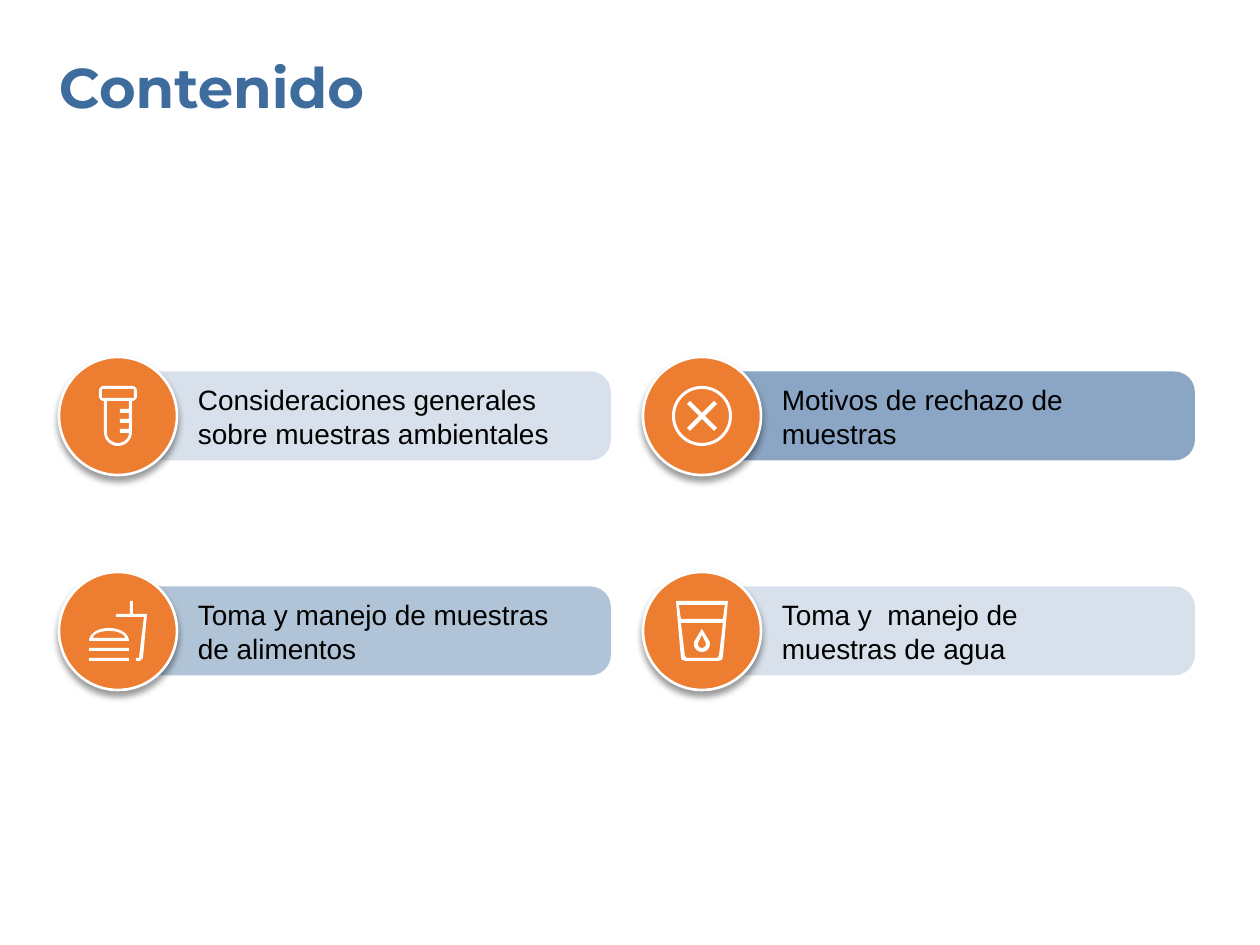
"""Build the contents slide: four labelled bars with round icons."""
from math import cos, radians, sin

from lxml import etree
from pptx import Presentation
from pptx import util as u
from pptx.dml.color import RGBColor
from pptx.enum import shapes, text
from pptx.oxml.ns import qn

THEME = {
    "blue": "3D6C9D", "orange": "ED7D31", "white": "FFFFFF", "black": "000000",
    "head": ("Montserrat", 32), "body": ("Arial", 16),
    "rim": 1.5, "round": 0.231,
    "shadow": {"blur": 4, "dist": 3, "alpha": 40},
}
TITLE = "Contenido"
ITEMS = [
    ("Consideraciones generales sobre muestras ambientales", 20, 379, "tube"),
    ("Motivos de rechazo de muestras", 60, 391, "cross"),
    ("Toma y manejo de muestras de alimentos", 40, 379, "meal"),
    ("Toma y  manejo de muestras de agua", 20, 358, "glass"),
]
COLS, STEP_X, STEP_Y = 2, 584, 215
MID = (118, 416)
DISC, BAR, LABEL = 118, (493, 89), (80, -33, 68)
HEAD = (59, 53, 1077, 68)
SCALE = 914400 / 126


def px(n):
    return u.Emu(round(n * SCALE))


def arc(x, y, rx, ry, start, end, parts=24):
    turns = [radians(start + (end - start) * i / parts) for i in range(parts + 1)]
    return [(x + rx * cos(t), y + ry * sin(t)) for t in turns]


def ring(r):
    return arc(0, 0, r, r, 0, 360, 72)


def drop(tip, r):
    return [(0, tip)] + arc(0, 13, r, r, -20, 200)


def box(left, top, right, bottom):
    return [(left, top), (right, top), (right, bottom), (left, bottom)]


def notch(y):
    return [(11, y), (2, y), (2, y + 4), (11, y + 4)]


ICONS = {
    "tube": [
        arc(-14, -25, 5, 5, 180, 270) + arc(14, -25, 5, 5, 270, 360)
        + arc(14, -20, 5, 5, 0, 90) + arc(0, 16, 14, 14, 0, 180)
        + [(-14, -15)] + arc(-14, -20, 5, 5, 90, 180),
        box(-16, -27, 16, -18),
        [(-11, -15), (11, -15)] + notch(-7) + notch(3) + notch(13)
        + arc(0, 17, 11, 10, 0, 180),
    ],
    "cross": [
        ring(30), ring(27),
        [(-12, 15), (0, 3), (12, 15), (15, 12), (3, 0), (15, -12),
         (12, -15), (0, -3), (-12, -15), (-15, -12), (-3, 0), (-15, 12)],
    ],
    "meal": [
        arc(-9, 10, 20, 13, 180, 360), arc(-9, 7, 16, 7, 180, 360),
        box(-29, 17, 11, 20), box(-29, 27, 11, 30),
        [(18, 30), (18, 27), (21, 27), (26, -14), (-2, -14), (-2, -17), (12, -17),
         (12, -30), (15, -30), (15, -17), (29, -17), (25, 27), (22, 30)],
    ],
    "glass": [
        [(-26, -30), (26, -30), (21, 26), (20, 29), (16, 30),
         (-16, 30), (-20, 29), (-21, 26)],
        [(-23, -26), (23, -26), (21, -12), (-21, -12)],
        [(-21, -8), (21, -8), (17, 25), (15, 27), (-15, 27), (-17, 25)],
        drop(-2, 8), drop(4, 4),
    ],
}


def paint(shape, color):
    shape.shadow.inherit = False
    shape.fill.solid()
    shape.fill.fore_color.rgb = RGBColor.from_string(THEME[color])
    shape.line.fill.background()


def fade(node, value):
    etree.SubElement(node, qn("a:alpha"), val=str(value * 1000))


def write(shape, words, font, color, bold=False):
    frame = shape.text_frame
    frame.word_wrap = True
    frame.auto_size = text.MSO_AUTO_SIZE.SHAPE_TO_FIT_TEXT
    frame.vertical_anchor = text.MSO_ANCHOR.TOP
    frame.margin_left = frame.margin_right = 0
    frame.margin_top = frame.margin_bottom = 0
    para = frame.paragraphs[0]
    para.alignment = text.PP_ALIGN.LEFT
    run = para.add_run()
    run.text = words
    run.font.name, size = THEME[font]
    run.font.size = u.Pt(size)
    run.font.bold = bold
    run.font.color.rgb = RGBColor.from_string(THEME[color])


def add_bar(slide, x, y, alpha):
    wide, high = BAR
    kind = shapes.MSO_SHAPE.ROUNDED_RECTANGLE
    bar = slide.shapes.add_shape(kind, px(x), px(y - high / 2), px(wide), px(high))
    bar.adjustments[0] = THEME["round"]
    paint(bar, "blue")
    fade(bar.fill._xPr.find(".//" + qn("a:srgbClr")), alpha)


def add_disc(slide, x, y):
    kind, half = shapes.MSO_SHAPE.OVAL, DISC / 2
    disc = slide.shapes.add_shape(kind, px(x - half), px(y - half), px(DISC), px(DISC))
    paint(disc, "orange")
    disc.line.color.rgb = RGBColor.from_string(THEME["white"])
    disc.line.width = u.Pt(THEME["rim"])
    look = THEME["shadow"]
    glow = etree.SubElement(
        disc._element.spPr.find(qn("a:effectLst")), qn("a:outerShdw"),
        blurRad=str(u.Pt(look["blur"])), dist=str(u.Pt(look["dist"])),
        dir="5400000", algn="t", rotWithShape="0")
    fade(etree.SubElement(glow, qn("a:srgbClr"), val=THEME["black"]), look["alpha"])


def add_icon(slide, x, y, name):
    loops = [[(px(x + dx), px(y + dy)) for dx, dy in loop] for loop in ICONS[name]]
    pen = slide.shapes.build_freeform(*loops[0][0])
    for i, loop in enumerate(loops):
        if i:
            pen.move_to(*loop[0])
        pen.add_line_segments(loop[1:], close=True)
    paint(pen.convert_to_shape(), "white")


def main():
    deck = Presentation()
    deck.slide_width, deck.slide_height = px(1260), px(945)
    slide = deck.slides.add_slide(deck.slide_layouts[5])
    title = slide.shapes.title
    title.left, title.top, title.width, title.height = map(px, HEAD)
    write(title, TITLE, "head", "blue", True)
    for i, (words, alpha, wide, icon) in enumerate(ITEMS):
        row, col = divmod(i, COLS)
        x, y = MID[0] + col * STEP_X, MID[1] + row * STEP_Y
        add_bar(slide, x, y, alpha)
        dx, dy, high = LABEL
        label = slide.shapes.add_textbox(px(x + dx), px(y + dy), px(wide), px(high))
        write(label, words, "body", "black")
        add_disc(slide, x, y)
        add_icon(slide, x, y, icon)
    deck.save("out.pptx")


if __name__ == "__main__":
    main()
